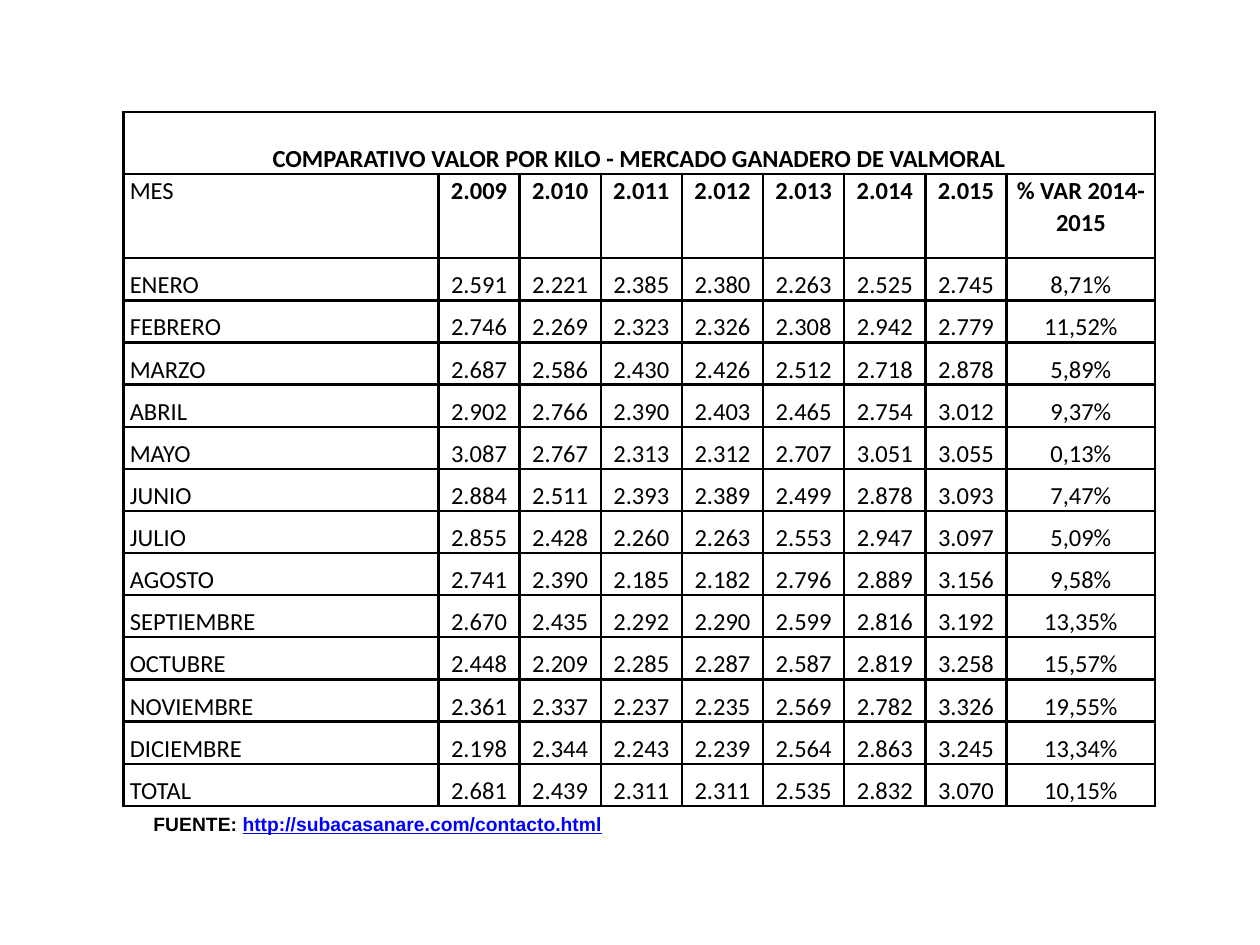
from lxml import etree
from pptx import Presentation
from pptx import util as u
from pptx.dml.color import RGBColor
from pptx.enum import text
from pptx.oxml.ns import qn

BLACK = RGBColor(0, 0, 0)
BLUE = RGBColor(0, 0, 255)

TITLE = "COMPARATIVO VALOR POR KILO - MERCADO GANADERO DE VALMORAL"
HEADER = ["MES", "2.009", "2.010", "2.011", "2.012", "2.013", "2.014", "2.015", "% VAR 2014-2015"]
MONTHS = [
    ["ENERO", "2.591", "2.221", "2.385", "2.380", "2.263", "2.525", "2.745", "8,71%"],
    ["FEBRERO", "2.746", "2.269", "2.323", "2.326", "2.308", "2.942", "2.779", "11,52%"],
    ["MARZO", "2.687", "2.586", "2.430", "2.426", "2.512", "2.718", "2.878", "5,89%"],
    ["ABRIL", "2.902", "2.766", "2.390", "2.403", "2.465", "2.754", "3.012", "9,37%"],
    ["MAYO", "3.087", "2.767", "2.313", "2.312", "2.707", "3.051", "3.055", "0,13%"],
    ["JUNIO", "2.884", "2.511", "2.393", "2.389", "2.499", "2.878", "3.093", "7,47%"],
    ["JULIO", "2.855", "2.428", "2.260", "2.263", "2.553", "2.947", "3.097", "5,09%"],
    ["AGOSTO", "2.741", "2.390", "2.185", "2.182", "2.796", "2.889", "3.156", "9,58%"],
    ["SEPTIEMBRE", "2.670", "2.435", "2.292", "2.290", "2.599", "2.816", "3.192", "13,35%"],
    ["OCTUBRE", "2.448", "2.209", "2.285", "2.287", "2.587", "2.819", "3.258", "15,57%"],
    ["NOVIEMBRE", "2.361", "2.337", "2.237", "2.235", "2.569", "2.782", "3.326", "19,55%"],
    ["DICIEMBRE", "2.198", "2.344", "2.243", "2.239", "2.564", "2.863", "3.245", "13,34%"],
]
TOTAL = ["TOTAL", "2.681", "2.439", "2.311", "2.311", "2.535", "2.832", "3.070", "10,15%"]
SOURCE = [("FUENTE: ", BLACK, False), ("http://subacasanare.com/contacto.html", BLUE, True)]

LEFT, TOP, WIDTH, HEIGHT = 0.98, 0.89, 8.19, 5.51
MONTH_WIDTH, CHANGE_WIDTH = 2.5, 1.18
TITLE_HEIGHT, HEADER_HEIGHT = 0.49, 0.67
CELL_FORMAT = {
    "margin_left": u.Inches(0.05),
    "margin_right": u.Inches(0.05),
    "margin_top": 0,
    "margin_bottom": 0,
}


def write_span(para, words, color=BLACK, **font):
    span = para.add_run()
    span.text = words
    span.font.color.rgb = color
    for name, value in font.items():
        setattr(span.font, name, value)


def draw_borders(cell):
    properties = cell._tc.get_or_add_tcPr()
    for position, side in enumerate(("lnL", "lnR", "lnT", "lnB")):
        line = etree.Element(qn(f"a:{side}"), w=str(u.Pt(1.5)))
        fill = etree.SubElement(line, qn("a:solidFill"))
        etree.SubElement(fill, qn("a:srgbClr"), val=str(BLACK))
        properties.insert(position, line)


def fill_cell(cell, words, bold, centered, anchor):
    for name, value in CELL_FORMAT.items():
        setattr(cell, name, value)
    cell.vertical_anchor = anchor
    cell.fill.background()
    draw_borders(cell)
    para = cell.text_frame.paragraphs[0]
    para.alignment = text.PP_ALIGN.CENTER if centered else text.PP_ALIGN.LEFT
    para.line_spacing = 1.07
    if words:
        write_span(para, words, size=u.Pt(14), name="Calibri", bold=bold)


def add_price_table(page):
    rows = [[TITLE] + [""] * (len(HEADER) - 1), HEADER, *MONTHS, TOTAL]
    years = len(HEADER) - 2
    year_width = (WIDTH - MONTH_WIDTH - CHANGE_WIDTH) / years
    month_height = (HEIGHT - TITLE_HEIGHT - HEADER_HEIGHT) / (len(rows) - 2)
    widths = [MONTH_WIDTH] + [year_width] * years + [CHANGE_WIDTH]
    heights = [TITLE_HEIGHT, HEADER_HEIGHT] + [month_height] * (len(rows) - 2)

    area = [u.Inches(length) for length in (LEFT, TOP, WIDTH, HEIGHT)]
    table = page.shapes.add_table(len(rows), len(HEADER), *area).table
    table.first_row = table.horz_banding = False
    for column, width in zip(table.columns, widths):
        column.width = u.Inches(width)
    for row, height in zip(table.rows, heights):
        row.height = u.Inches(height)

    for r, values in enumerate(rows):
        anchor = text.MSO_ANCHOR.TOP if r == 1 else text.MSO_ANCHOR.BOTTOM
        for c, words in enumerate(values):
            bold = r == 0 or (r == 1 and c > 0)
            fill_cell(table.cell(r, c), words, bold, r == 0 or c > 0, anchor)
    table.cell(0, 0).merge(table.cell(0, len(HEADER) - 1))


def add_source(page):
    area = [u.Inches(length) for length in (1.12, TOP + HEIGHT, 5, 0.29)]
    frame = page.shapes.add_textbox(*area).text_frame
    frame.word_wrap = True
    frame.auto_size = text.MSO_AUTO_SIZE.SHAPE_TO_FIT_TEXT
    for words, color, underline in SOURCE:
        write_span(frame.paragraphs[0], words, color, size=u.Pt(11), name="Arial",
                   bold=True, underline=underline)


def main():
    deck = Presentation()
    deck.slide_width, deck.slide_height = u.Inches(10), u.Inches(7.5)
    page = deck.slides.add_slide(deck.slide_layouts[6])
    add_price_table(page)
    add_source(page)
    deck.save("out.pptx")


if __name__ == "__main__":
    main()
